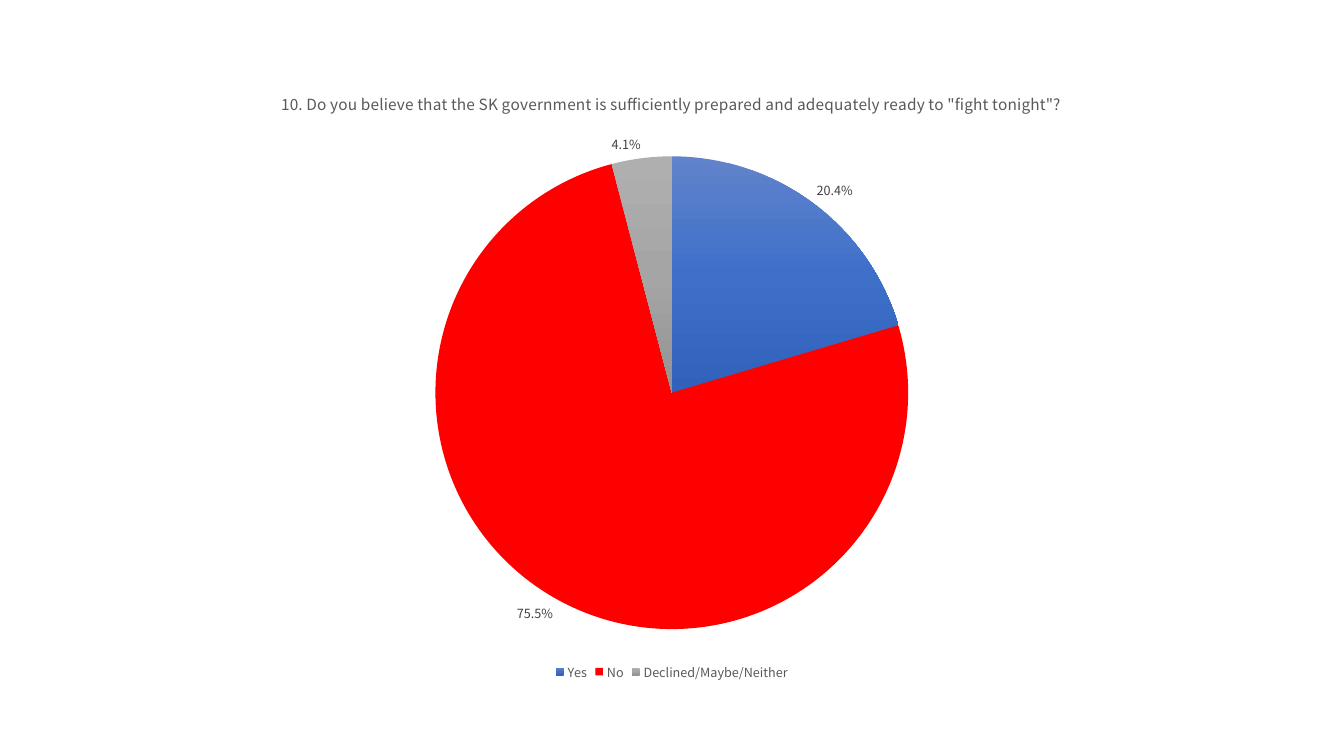
from copy import deepcopy

from pptx import Presentation
from pptx.chart.data import CategoryChartData
from pptx.dml.color import RGBColor
from pptx.enum.chart import XL_CHART_TYPE, XL_LABEL_POSITION, XL_LEGEND_POSITION
from pptx.util import Cm, Pt

PIE = XL_CHART_TYPE.PIE
OUTSIDE_END = XL_LABEL_POSITION.OUTSIDE_END
BOTTOM = XL_LEGEND_POSITION.BOTTOM

FONT = "Noto Sans CJK KR"
BLANK_LAYOUT = 6
COLORS = {
    "text": "000000",
    "heading": "595959",
    "label": "404040",
    "no": "FF0000",
    "yes_top": "6183CB",
    "yes_middle": "3E70CA",
    "yes_bottom": "3062BB",
    "declined_top": "AFAFAF",
    "declined_middle": "A5A5A5",
    "declined_bottom": "939393",
}
QUESTION = (
    "10. Do you believe that the SK government is sufficiently prepared "
    'and adequately ready to "fight tonight"?'
)
ANSWERS = {"Yes": 0.204, "No": 0.755, "Declined/Maybe/Neither": 0.041}


def rgb(name):
    return RGBColor.from_string(COLORS[name])


def style_font(font, size, color):
    font.name = FONT
    font.size = Pt(size)
    font.bold = False
    font.color.rgb = rgb(color)


def fill_gradient(fill, answer):
    """Shade a slice downwards through its top, middle and bottom colours."""
    fill.gradient()
    fill.gradient_angle = 270
    first_stop = fill.gradient_stops[0]._gs
    first_stop.addnext(deepcopy(first_stop))
    for index, level in enumerate(("top", "middle", "bottom")):
        stop = fill.gradient_stops[index]
        stop.position = index / 2
        stop.color.rgb = rgb(f"{answer}_{level}")


def add_answer_pie(slide):
    answers = CategoryChartData(number_format="0.0%")
    answers.categories = list(ANSWERS)
    answers.add_series(QUESTION, list(ANSWERS.values()))
    frame = slide.shapes.add_chart(
        PIE, Cm(1.78), Cm(1.78), Cm(30.3), Cm(15.47), answers
    )
    pie = frame.chart
    style_font(pie.font, 10, "text")
    return pie


def style_title(pie):
    pie.has_title = True
    heading = pie.chart_title.text_frame
    heading.text = QUESTION
    style_font(heading.paragraphs[0].font, 11, "heading")
    pie.chart_title.include_in_layout = False


def style_legend(pie):
    pie.has_legend = True
    pie.legend.position = BOTTOM
    pie.legend.include_in_layout = False
    style_font(pie.legend.font, 9, "heading")


def style_slices(pie):
    plot = pie.plots[0]
    plot.vary_by_categories = True
    yes, no, declined = (plot.series[0].points[i] for i in range(len(ANSWERS)))
    fill_gradient(yes.format.fill, "yes")
    no.format.fill.solid()
    no.format.fill.fore_color.rgb = rgb("no")
    fill_gradient(declined.format.fill, "declined")


def style_labels(pie):
    labels = pie.plots[0].series[0].data_labels
    labels.show_value = True
    labels.show_percentage = False
    labels.number_format = "0.0%"
    labels.number_format_is_linked = False
    labels.position = OUTSIDE_END
    style_font(labels.font, 9, "label")


def main():
    presentation = Presentation()
    presentation.slide_width = Cm(33.87)
    presentation.slide_height = Cm(19.05)
    slide = presentation.slides.add_slide(presentation.slide_layouts[BLANK_LAYOUT])
    pie = add_answer_pie(slide)
    style_title(pie)
    style_legend(pie)
    style_slices(pie)
    style_labels(pie)
    presentation.save("out.pptx")


if __name__ == "__main__":
    main()
